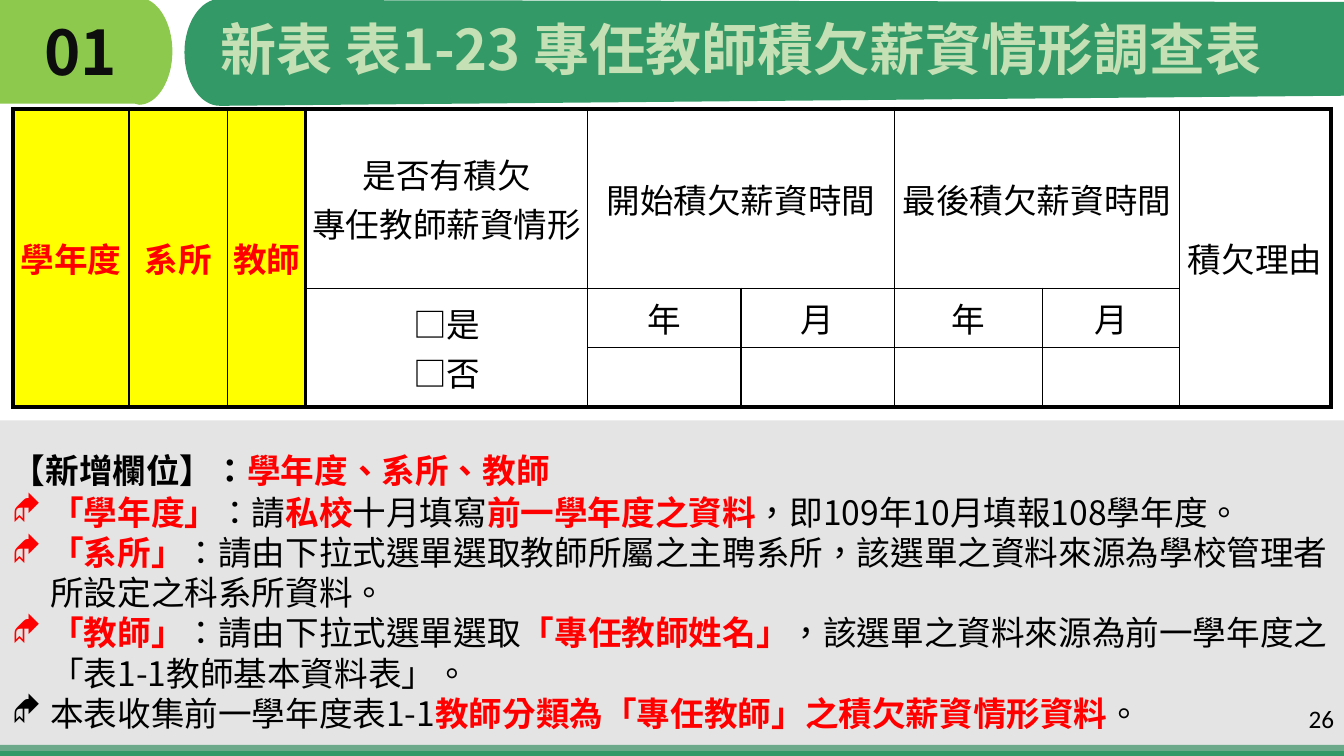
from dataclasses import dataclass

from lxml.etree import SubElement
from pptx import Presentation
from pptx.dml.color import RGBColor
from pptx.enum.lang import MSO_LANGUAGE_ID as Lang
from pptx.enum.shapes import MSO_SHAPE as Preset
from pptx.enum.text import MSO_ANCHOR as Anchor, PP_ALIGN as Align
from pptx.oxml.ns import qn
from pptx.util import Inches, Pt


@dataclass(frozen=True)
class Theme:
    lime: str = "8CC94C"
    green: str = "339966"
    pale_green: str = "C5E0B4"
    grey: str = "BFBFBF"
    grey_alpha: int = 41
    yellow: str = "FFFF00"
    red: str = "FF0000"
    black: str = "000000"
    near_black: str = "0D0D0D"
    cjk: str = "Noto Sans CJK SC"
    latin: str = "Calibri"
    number_size: int = 44
    title_size: int = 40
    body_size: int = 24
    page_size: int = 18


THEME = Theme()
Point = tuple[float, float]
Box = tuple[float, float, float, float]


@dataclass(frozen=True)
class Span:
    text: str
    color: str = THEME.black
    bold: bool = False
    size: int = THEME.body_size
    font: str = THEME.cjk


@dataclass(frozen=True)
class Field:
    row: int
    col: int
    lines: tuple[str, ...] = ()
    rows: int = 1
    cols: int = 1
    key: bool = False


def red(text: str) -> Span:
    return Span(text, THEME.red, True)


FIELDS = [
    Field(0, 0, ("學年度",), rows=3, key=True),
    Field(0, 1, ("系所",), rows=3, key=True),
    Field(0, 2, ("教師",), rows=3, key=True),
    Field(0, 3, ("是否有積欠", "專任教師薪資情形")),
    Field(0, 4, ("開始積欠薪資時間",), cols=2),
    Field(0, 6, ("最後積欠薪資時間",), cols=2),
    Field(0, 8, ("積欠理由",), rows=3),
    Field(1, 3, ("□是", "□否"), rows=2),
    *(Field(1, 4 + i, (unit,)) for i, unit in enumerate("年月年月")),
    *(Field(2, col) for col in range(4, 8)),
]
COLUMN_WIDTHS = (1.15, 0.98, 0.77, 2.8, 1.52, 1.52, 1.47, 1.36, 1.5)
ROW_HEIGHTS = (1.78, 0.59, 0.59)
HEAVY_COLUMNS = (0, 3, len(COLUMN_WIDTHS))
HEAVY_ROWS = (0, len(ROW_HEIGHTS))

NOTES_HEADING = [Span("【新增欄位】：", bold=True), red("學年度、系所、教師")]
NOTES = [
    [red("「學年度」"), Span("：請"), red("私校"), Span("十月填寫"),
     red("前一學年度之資料"), Span("，即109年10月填報108學年度。")],
    [red("「系所」"),
     Span("：請由下拉式選單選取教師所屬之主聘系所，該選單之資料來源為學校管理者所設定之科系所資料。")],
    [red("「教師」"), Span("：請由下拉式選單選取"), red("「專任教師姓名」"),
     Span("，該選單之資料來源為前一學年度之「表1-1教師基本資料表」。")],
    [Span("本表收集前一學年度表1-1"),
     red("教師分類為「專任教師」之積欠薪資情形資料"), Span("。")],
]


def rgb(color: str) -> RGBColor:
    return RGBColor.from_string(color)


def add_spans(paragraph, spans: list[Span]) -> None:
    for span in spans:
        run = paragraph.add_run()
        run.text = span.text
        font = run.font
        font.size, font.bold, font.name = Pt(span.size), span.bold, span.font
        font.color.rgb = rgb(span.color)
        font.language_id = Lang.TRADITIONAL_CHINESE
        SubElement(font._element, qn("a:ea"), typeface=span.font)


def add_text(slide, box: Box, spans: list[Span]):
    frame = slide.shapes.add_textbox(*map(Inches, box)).text_frame
    frame.word_wrap = True
    add_spans(frame.paragraphs[0], spans)
    return frame


def paint(shape, color: str) -> None:
    shape.shadow.inherit = False
    shape.fill.solid()
    shape.fill.fore_color.rgb = rgb(color)
    shape.line.fill.background()


def add_band(slide, box: Box, color: str):
    band = slide.shapes.add_shape(Preset.RECTANGLE, *map(Inches, box))
    paint(band, color)
    return band


def curve(a: Point, b: Point, c: Point, d: Point, steps: int = 16) -> list[Point]:
    """Sample a cubic Bezier curve, both ends included."""
    points = []
    for t in (i / steps for i in range(steps + 1)):
        u = 1 - t
        weights = (u**3, 3 * u * u * t, 3 * u * t * t, t**3)
        points.append(tuple(sum(w * p[axis] for w, p in zip(weights, (a, b, c, d)))
                            for axis in (0, 1)))
    return points


def add_outline(slide, points: list[Point], color: str) -> None:
    scaled = [(Inches(x), Inches(y)) for x, y in points]
    builder = slide.shapes.build_freeform(*scaled[0], scale=1.0)
    builder.add_line_segments(scaled[1:], close=True)
    paint(builder.convert_to_shape(), color)


def add_header(slide) -> None:
    tab = (curve((1.38, -0.02), (1.56, -0.02), (1.71, 0.22), (1.71, 0.51))
           + curve((1.71, 0.51), (1.71, 0.8), (1.56, 1.04), (1.38, 1.04))
           + [(1.34, 1.03), (0, 1.03), (0, -0.01), (1.34, -0.01)])
    banner = (curve((2.18, 1.05), (1.99, 1.05), (1.83, 0.82), (1.83, 0.52))
              + curve((1.83, 0.52), (1.83, 0.23), (1.99, -0.01), (2.18, -0.01))
              + [(2.22, 0), (13.33, 0.02), (13.33, 0.95), (2.22, 1.05)])
    add_outline(slide, tab, THEME.lime)
    add_outline(slide, banner, THEME.green)
    for box, heading in (
        ((0.34, 0.17, 1.37, 1.45),
         Span("01", THEME.near_black, True, THEME.number_size)),
        ((2.09, 0.17, 11.07, 0.82),
         Span("新表 表1-23 專任教師積欠薪資情形調查表", THEME.pale_green, True,
              THEME.title_size)),
    ):
        add_text(slide, box, [heading]).paragraphs[0].line_spacing = 0.9


def set_borders(cell, field: Field) -> None:
    """Draw heavy lines around the table and after the key columns."""
    heavy = {
        "L": field.col in HEAVY_COLUMNS,
        "R": field.col + field.cols in HEAVY_COLUMNS,
        "T": field.row in HEAVY_ROWS,
        "B": field.row + field.rows in HEAVY_ROWS,
    }
    properties = cell._tc.get_or_add_tcPr()
    for side, is_heavy in heavy.items():
        line = SubElement(properties, qn(f"a:ln{side}"), w=str(Pt(3 if is_heavy else 1)))
        SubElement(SubElement(line, qn("a:solidFill")), qn("a:srgbClr"), val=THEME.black)


def add_survey_table(slide) -> None:
    table = slide.shapes.add_table(
        len(ROW_HEIGHTS), len(COLUMN_WIDTHS), Inches(0.13), Inches(1.08),
        Inches(sum(COLUMN_WIDTHS)), Inches(sum(ROW_HEIGHTS))).table
    table.first_row = table.horz_banding = False
    for column, width in zip(table.columns, COLUMN_WIDTHS):
        column.width = Inches(width)
    for row, height in zip(table.rows, ROW_HEIGHTS):
        row.height = Inches(height)
    for field in FIELDS:
        cell = table.cell(field.row, field.col)
        if field.rows * field.cols > 1:
            cell.merge(table.cell(field.row + field.rows - 1, field.col + field.cols - 1))
        set_borders(cell, field)
        cell.vertical_anchor = Anchor.MIDDLE
        cell.margin_left = cell.margin_right = Inches(0.02)
        cell.margin_top = cell.margin_bottom = 0
        for i, line in enumerate(field.lines):
            frame = cell.text_frame
            paragraph = frame.add_paragraph() if i else frame.paragraphs[0]
            paragraph.alignment = Align.CENTER
            add_spans(paragraph, [red(line) if field.key else Span(line)])
    for cell in table.iter_cells():
        cell.fill.background()
    for field in filter(lambda f: f.key, FIELDS):
        fill = table.cell(field.row, field.col).fill
        fill.solid()
        fill.fore_color.rgb = rgb(THEME.yellow)


def add_notes_panel(slide) -> None:
    add_band(slide, (0, 7.39, 13.33, 0.12), THEME.green)
    panel = add_band(slide, (0, 4.17, 13.33, 3.28), THEME.grey)
    tint = panel.fill._xPr.find(".//" + qn("a:srgbClr"))
    SubElement(tint, qn("a:alpha"), val=str(THEME.grey_alpha * 1000))
    frame = add_text(slide, (0.02, 4.2, 13.32, 3.13), NOTES_HEADING)
    frame.paragraphs[0].line_spacing = Pt(44)
    frame.paragraphs[0].space_after = Pt(1.5)
    for note in NOTES:
        paragraph = frame.add_paragraph()
        paragraph.line_spacing = Pt(28.7)
        properties = paragraph._p.get_or_add_pPr()
        properties.set("marL", str(Inches(0.38)))
        properties.set("indent", str(-Inches(0.38)))
        SubElement(properties, qn("a:buFont"), typeface="Wingdings")
        SubElement(properties, qn("a:buChar"), char="◆")
        add_spans(paragraph, note)


def main() -> None:
    deck = Presentation()
    deck.slide_width, deck.slide_height = Inches(13.33), Inches(7.5)
    slide = deck.slides.add_slide(deck.slide_layouts[6])
    add_header(slide)
    add_notes_panel(slide)
    add_survey_table(slide)
    page = add_text(slide, (10.33, 6.93, 3, 0.4),
                    [Span("26", size=THEME.page_size, font=THEME.latin)])
    page.paragraphs[0].alignment = Align.RIGHT
    deck.save("out.pptx")


if __name__ == "__main__":
    main()
